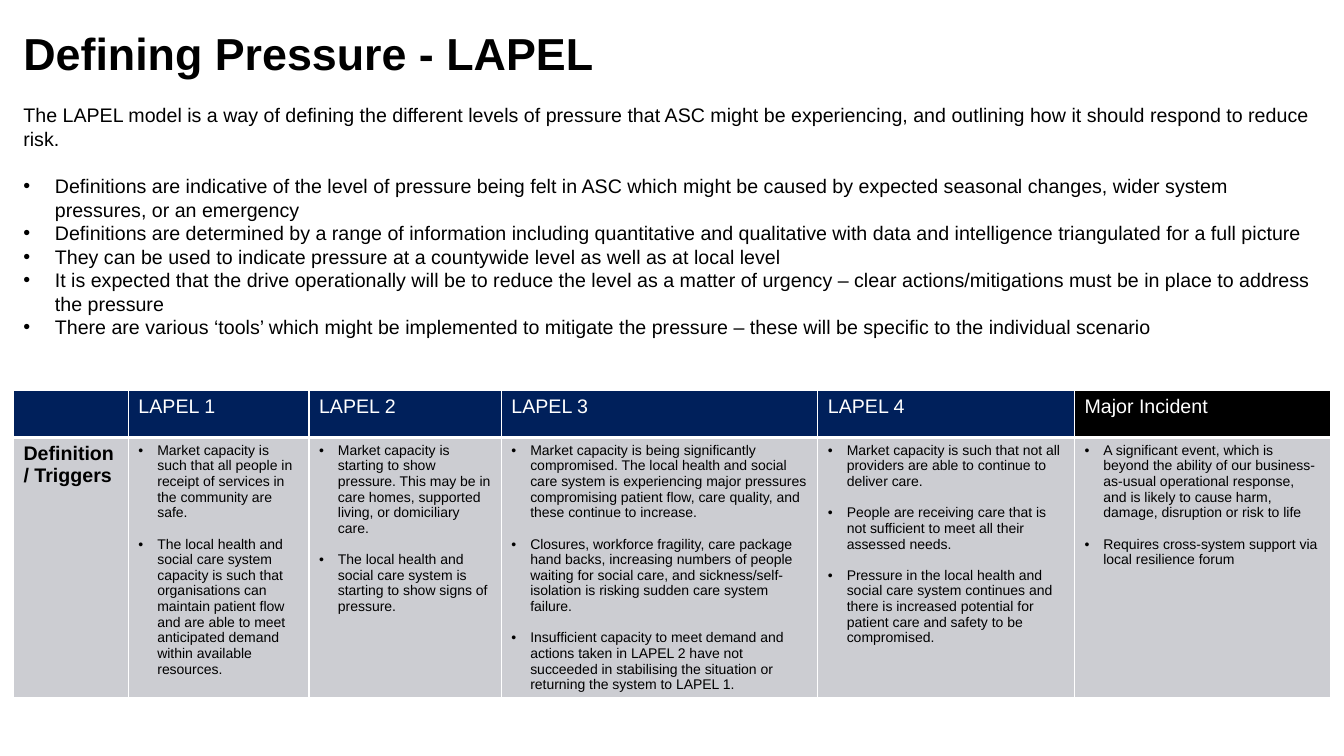
from lxml import etree
from pptx import Presentation
from pptx.dml.color import RGBColor
from pptx.enum.text import MSO_AUTO_SIZE
from pptx.oxml.ns import qn
from pptx.util import Pt

GROW = MSO_AUTO_SIZE.SHAPE_TO_FIT_TEXT
FONT = "Arial"
COLORS = {"navy": "00205B", "black": "000000", "grey": "CCCDD2", "white": "FFFFFF"}


def style(par, size, color="black", bold=False, indent=0, before=0):
    """Format a paragraph; an indent also gives it a bullet."""
    par.space_before = Pt(before)
    for run in par.runs:
        run.font.name = FONT
        run.font.size = Pt(size)
        run.font.bold = bold
        run.font.color.rgb = RGBColor.from_string(COLORS[color])
    if indent:
        props = par._p.get_or_add_pPr()
        props.set("marL", str(Pt(indent)))
        props.set("indent", str(-Pt(indent)))
        etree.SubElement(props, qn("a:buFont")).set("typeface", FONT)
        etree.SubElement(props, qn("a:buChar")).set("char", "•")


def paint(cell, color, base):
    """Give a cell white borders and a solid fill."""
    props = cell._tc.get_or_add_tcPr()
    for side, width in (("L", 1), ("R", 1), ("T", 1), ("B", base)):
        line = etree.SubElement(props, qn("a:ln" + side), w=str(Pt(width)))
        fill = etree.SubElement(line, qn("a:solidFill"))
        etree.SubElement(fill, qn("a:srgbClr")).set("val", COLORS["white"])
    cell.fill.solid()
    cell.fill.fore_color.rgb = RGBColor.from_string(COLORS[color])


prs = Presentation()
prs.slide_width, prs.slide_height = Pt(960), Pt(540)
slide = prs.slides.add_slide(prs.slide_layouts[6])

# Table of levels
LEVELS = [
    ("", 82.1, "navy", []),
    ("LAPEL 1", 129, "navy", [
        "Market capacity is such that all people in receipt of services in the community are safe.",
        "The local health and social care system capacity is such that organisations can maintain "
        "patient flow and are able to meet anticipated demand within available resources."]),
    ("LAPEL 2", 137.4, "navy", [
        "Market capacity is starting to show pressure. This may be in care homes, supported living, "
        "or domiciliary care.",
        "The local health and social care system is starting to show signs of pressure."]),
    ("LAPEL 3", 226.1, "navy", [
        "Market capacity is being significantly compromised. The local health and social care system "
        "is experiencing major pressures compromising patient flow, care quality, and these continue "
        "to increase.",
        "Closures, workforce fragility, care package hand backs, increasing numbers of people waiting "
        "for social care, and sickness/self-isolation is risking sudden care system failure.",
        "Insufficient capacity to meet demand and actions taken in LAPEL 2 have not succeeded in "
        "stabilising the situation or returning the system to LAPEL 1."]),
    ("LAPEL 4", 183.3, "navy", [
        "Market capacity is such that not all providers are able to continue to deliver care.",
        "People are receiving care that is not sufficient to meet all their assessed needs.",
        "Pressure in the local health and social care system continues and there is increased "
        "potential for patient care and safety to be compromised."]),
    ("Major Incident", 183.3, "black", [
        "A significant event, which is beyond the ability of our business-as-usual operational "
        "response, and is likely to cause harm, damage, disruption or risk to life",
        "Requires cross-system support via local resilience forum"]),
]
table = slide.shapes.add_table(2, len(LEVELS), Pt(9.6), Pt(278.9), Pt(941.2), Pt(219.6)).table
table.rows[0].height, table.rows[1].height = Pt(33.6), Pt(186)

for col, (name, width, color, points) in enumerate(LEVELS):
    table.columns[col].width = Pt(width)
    head, body = table.cell(0, col), table.cell(1, col)
    paint(head, color, 3)
    paint(body, "grey", 1)
    head.text_frame.text = name
    style(head.text_frame.paragraphs[0], 14, "white")
    body.text_frame.text = "\n".join(points)
    for i, par in enumerate(body.text_frame.paragraphs):
        style(par, 10, indent=13.5, before=11.2 if i else 0)

label = table.cell(1, 0).text_frame
label.text = "Definition/ Triggers"
style(label.paragraphs[0], 14, bold=True)

# Title, introduction and bullets
INTRO = [
    "Defining Pressure - LAPEL",
    "The LAPEL model is a way of defining the different levels of pressure that ASC might be "
    "experiencing, and outlining how it should respond to reduce risk.",
    "Definitions are indicative of the level of pressure being felt in ASC which might be caused by "
    "expected seasonal changes, wider system pressures, or an emergency",
    "Definitions are determined by a range of information including quantitative and qualitative "
    "with data and intelligence triangulated for a full picture",
    "They can be used to indicate pressure at a countywide level as well as at local level",
    "It is expected that the drive operationally will be to reduce the level as a matter of urgency "
    "– clear actions/mitigations must be in place to address the pressure",
    "There are various ‘tools’ which might be implemented to mitigate the pressure – these will be "
    "specific to the individual scenario",
]
frame = slide.shapes.add_textbox(Pt(9.6), Pt(15.1), Pt(941.2), Pt(232.6)).text_frame
frame.word_wrap = True
frame.auto_size = GROW
frame.text = "\n".join(INTRO)
title, lead, *items = frame.paragraphs
style(title, 32, bold=True)
style(lead, 14, before=16.8)
for i, par in enumerate(items):
    style(par, 14, indent=22.5, before=0 if i else 16.8)

prs.save("out.pptx")
